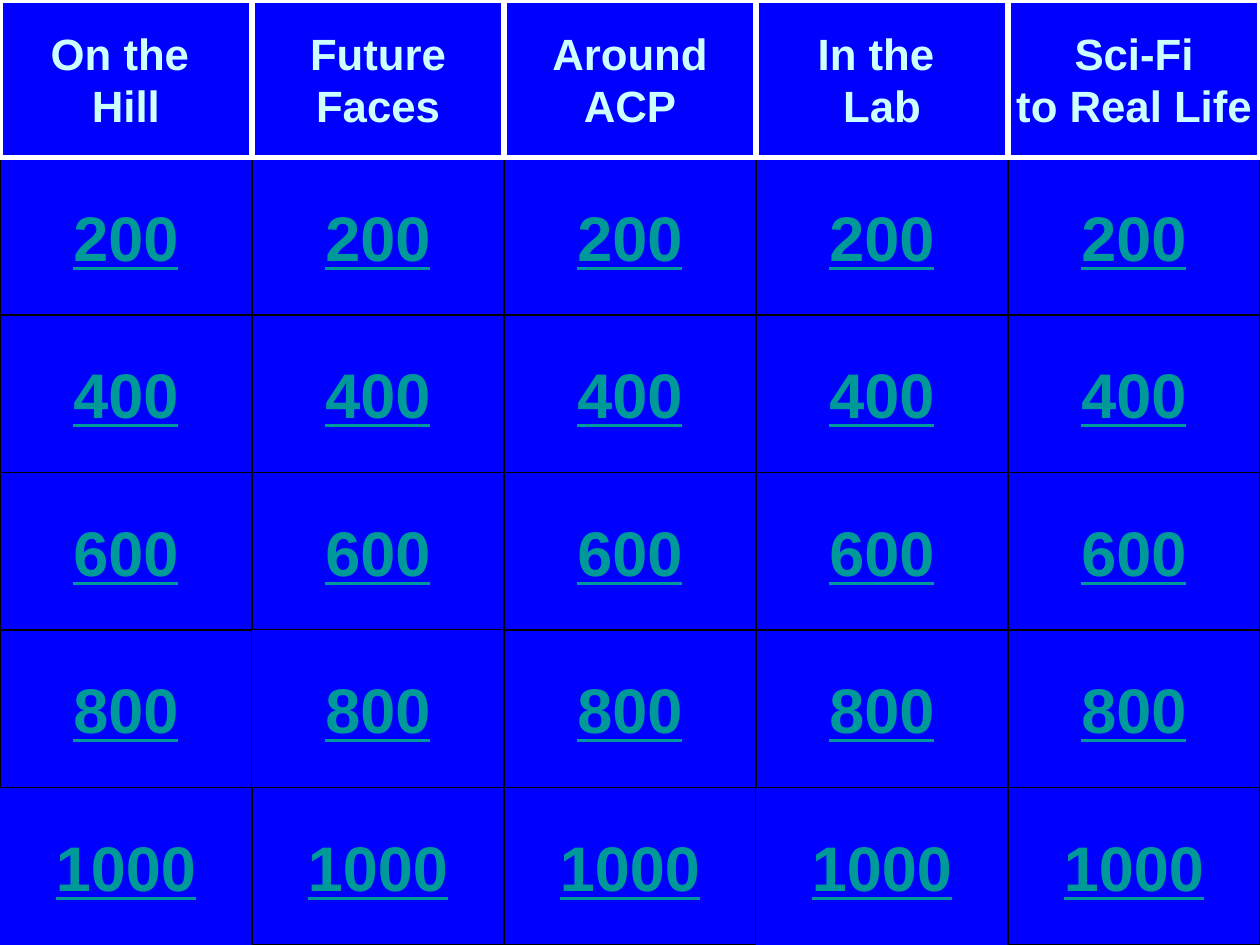
"""Build a quiz board with five categories and five rows of point values."""
from dataclasses import dataclass
from itertools import product

from pptx import Presentation
from pptx import util as u
from pptx.dml.color import RGBColor
from pptx.enum import shapes, text


@dataclass(frozen=True)
class Theme:
    font: str = "Arial"
    board: str = "0000FF"
    grid: str = "000000"
    frame: str = "FFFFFF"
    heading: str = "CCFFFF"
    points: str = "009999"
    heading_size: float = 25
    points_size: float = 36
    grid_width: float = 0.75
    frame_width: float = 3


class Board:
    CELL_WIDTH = u.Inches(2)
    CELL_HEIGHT = u.Inches(1.25)

    def __init__(self, page, theme):
        self.page = page
        self.theme = theme
        fill = page.background.fill
        fill.solid()
        fill.fore_color.rgb = RGBColor.from_string(theme.board)

    def cell(self, preset, column, row, line=None, width=0):
        box = self.page.shapes.add_shape(
            preset, column * self.CELL_WIDTH, row * self.CELL_HEIGHT,
            self.CELL_WIDTH, self.CELL_HEIGHT)
        box.shadow.inherit = False
        box.fill.solid()
        box.fill.fore_color.rgb = RGBColor.from_string(self.theme.board)
        if line:
            box.line.color.rgb = RGBColor.from_string(line)
            box.line.width = u.Pt(width)
        else:
            box.line.fill.background()
        frame = box.text_frame
        frame.word_wrap = False
        frame.vertical_anchor = text.MSO_ANCHOR.MIDDLE
        return frame

    def label(self, para, words, size, color, underline=None):
        para.alignment = text.PP_ALIGN.CENTER
        for index, line in enumerate(words.split("\n")):
            if index:
                para.add_line_break()
            span = para.add_run()
            span.text = line
            span.font.name = self.theme.font
            span.font.size = u.Pt(size)
            span.font.bold = True
            span.font.underline = underline
            span.font.color.rgb = RGBColor.from_string(color)

    def heading(self, column, lines):
        theme = self.theme
        frame = self.cell(shapes.MSO_SHAPE.RECTANGLE, column, 0,
                          theme.frame, theme.frame_width)
        for index, line in enumerate(lines):
            para = frame.add_paragraph() if index else frame.paragraphs[0]
            self.label(para, line, theme.heading_size, theme.heading)

    def points(self, column, row, outlined):
        theme = self.theme
        line = theme.grid if outlined else None
        frame = self.cell(shapes.MSO_SHAPE.ACTION_BUTTON_CUSTOM, column, row,
                          line, theme.grid_width)
        self.label(frame.paragraphs[0], str(200 * row), theme.points_size,
                   theme.points, underline=True)


CATEGORIES = [
    ["On the ", "Hill"],
    ["Future", "Faces"],
    ["Around", "ACP"],
    ["In the \nLab"],
    ["Sci-Fi", "to Real Life"],
]
UNLINED = {(0, 5), (1, 4), (3, 5)}


def main():
    deck = Presentation()
    deck.slide_width, deck.slide_height = u.Inches(10), u.Inches(7.5)
    board = Board(deck.slides.add_slide(deck.slide_layouts[6]), Theme())

    first, *others = product(range(5), range(1, 6))
    for place in [*others, first]:
        board.points(*place, outlined=place not in UNLINED)
    for column, lines in enumerate(CATEGORIES):
        board.heading(column, lines)

    deck.save("out.pptx")


if __name__ == "__main__":
    main()
